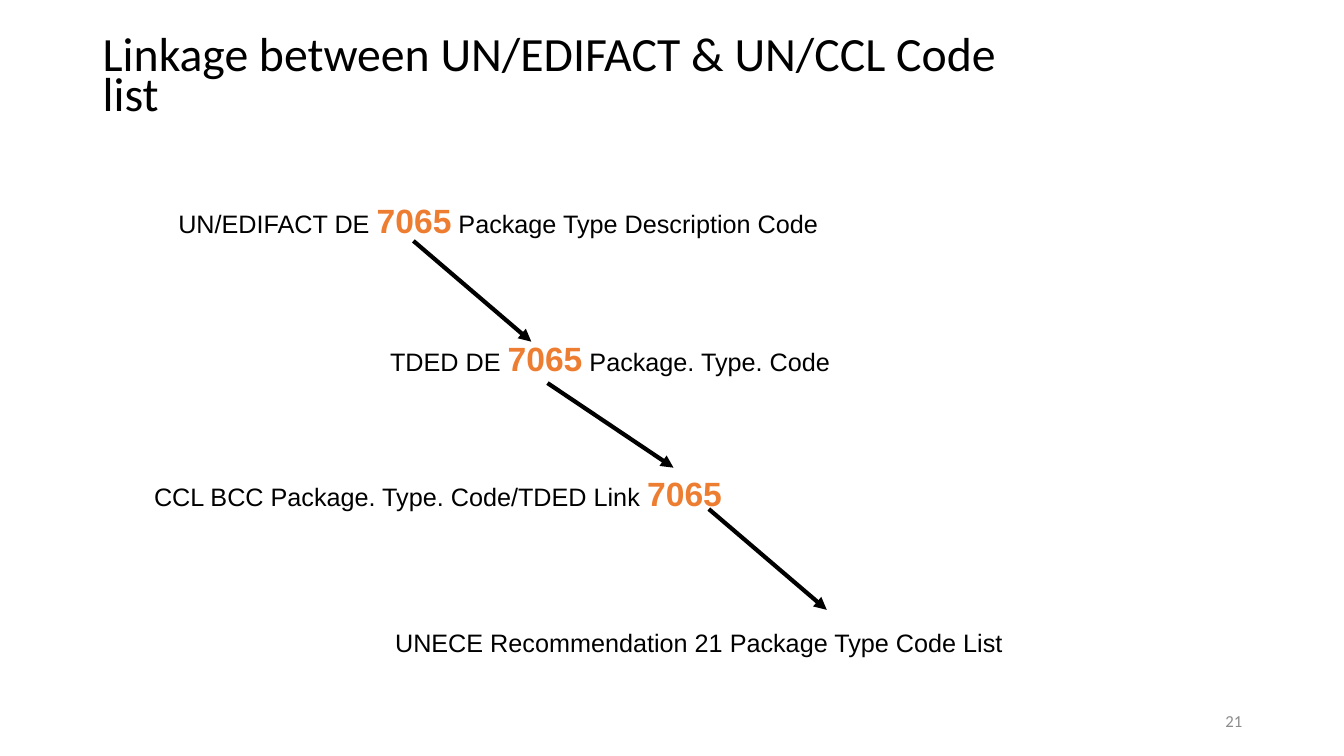
from lxml import etree
from pptx import Presentation
from pptx import util as u
from pptx.dml.color import RGBColor
from pptx.enum import shapes, text
from pptx.oxml import ns

PX = 9144
BLACK = RGBColor(0x00, 0x00, 0x00)
ORANGE = RGBColor(0xED, 0x7D, 0x31)
GREY = RGBColor(0x8C, 0x8C, 0x8C)
CODE = "7065"

deck = Presentation()
deck.slide_width, deck.slide_height = 1333 * PX, 750 * PX
slide = deck.slides.add_slide(deck.slide_layouts[6])


def add_text(left, top, width, height, wrap):
    frame = slide.shapes.add_textbox(*(n * PX for n in (left, top, width, height))).text_frame
    frame.word_wrap = wrap
    return frame


def style(font, name, size, color):
    font.name, font.size, font.color.rgb = name, u.Pt(size), color


levels = [
    (167, 193, 658, 50, ["UN/EDIFACT DE ", CODE, " Package Type Description Code"]),
    (377, 330, 458, 50, ["TDED DE ", CODE, " Package. Type. Code"]),
    (143, 464, 586, 50, ["CCL BCC Package. Type. Code/TDED Link ", CODE]),
    (382, 617, 628, 40, ["UNECE Recommendation 21 Package Type Code List"]),
]
for left, top, width, height, parts in levels:
    label = add_text(left, top, width, height, False)
    label.auto_size = text.MSO_AUTO_SIZE.SHAPE_TO_FIT_TEXT
    for part in parts:
        run = label.paragraphs[0].add_run()
        run.text = part
        is_code = part == CODE
        style(run.font, "Arial", 24 if is_code else 18, ORANGE if is_code else BLACK)
        run.font.bold = is_code

links = [(410, 239, 527, 339), (543, 380, 668, 464), (703, 505, 820, 605)]
for ends in links:
    link = slide.shapes.add_connector(shapes.MSO_CONNECTOR.STRAIGHT, *(n * PX for n in ends))
    link.line.color.rgb = BLACK
    link.line.width = u.Pt(3)
    etree.SubElement(link.line._get_or_add_ln(), ns.qn("a:tailEnd"), type="triangle")
    etree.SubElement(link._element.spPr, ns.qn("a:effectLst"))

title = add_text(92, 36, 962, 86, True)
title.vertical_anchor = text.MSO_ANCHOR.MIDDLE
heading = title.paragraphs[0]
heading.text = "Linkage between UN/EDIFACT & UN/CCL Code list"
heading.line_spacing = 0.7
style(heading.font, "Calibri", 34.1, BLACK)

footer = add_text(942, 695, 300, 40, True)
footer.vertical_anchor = text.MSO_ANCHOR.MIDDLE
page_number = footer.paragraphs[0]
page_number.text = "21"
page_number.alignment = text.PP_ALIGN.RIGHT
style(page_number.font, "Calibri", 12, GREY)

deck.save("out.pptx")
